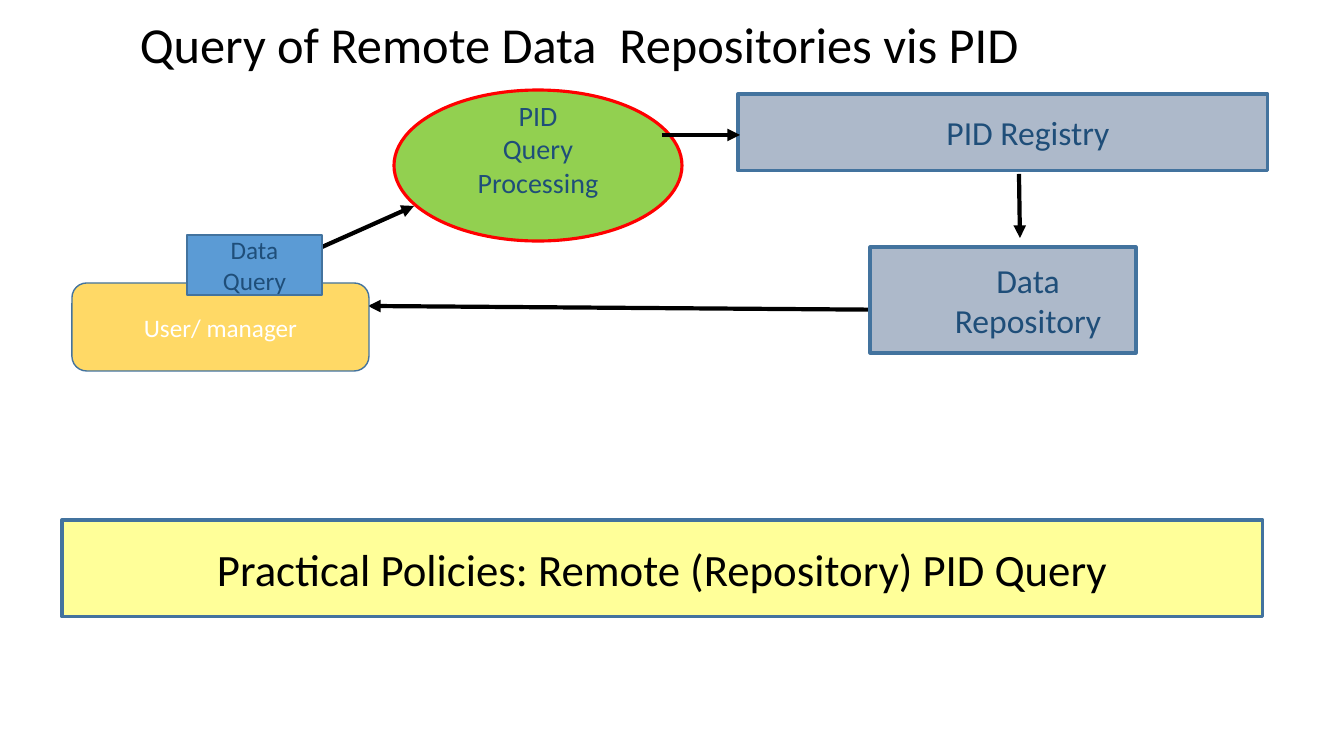
from lxml import etree
from pptx import Presentation
from pptx import util as u
from pptx.dml.color import RGBColor
from pptx.enum import shapes, text
from pptx.oxml.ns import qn

EMU_PER_PX = 914400 / 100.8
BLACK = "000000"
WHITE = "FFFFFF"
NAVY = "1F4E79"
STEEL = "43739E"
SLATE = "ADB9CA"


def px(length):
    return u.Emu(round(length * EMU_PER_PX))


def color(code):
    return RGBColor.from_string(code)


def write(shape, lines, size=18, ink=NAVY, font="Calibri", spacing=None, margins=(10, 5, 10, 5)):
    frame = shape.text_frame
    frame.word_wrap = True
    frame.auto_size = text.MSO_AUTO_SIZE.NONE
    frame.vertical_anchor = text.MSO_ANCHOR.MIDDLE
    frame.margin_left, frame.margin_top, frame.margin_right, frame.margin_bottom = map(px, margins)
    for index, line in enumerate(lines):
        para = frame.add_paragraph() if index else frame.paragraphs[0]
        para.alignment = text.PP_ALIGN.CENTER
        para.line_spacing = spacing
        span = para.add_run()
        span.text = line
        span.font.name = font
        span.font.size = u.Pt(size)
        span.font.color.rgb = color(ink)


class Canvas:
    def __init__(self, page, border=STEEL, border_width=2.25, arrow_width=3):
        self.page = page
        self.border = border
        self.border_width = border_width
        self.arrow_width = arrow_width

    def title(self, line, left, top, width, height):
        title = self.page.shapes.title
        title.left, title.top, title.width, title.height = map(px, (left, top, width, height))
        write(title, [line], size=36, ink=BLACK, spacing=0.9)

    def box(self, lines, left, top, width, height, fill, kind="RECTANGLE",
            border=None, border_width=None, **style):
        preset = shapes.MSO_SHAPE[kind]
        box = self.page.shapes.add_shape(preset, *map(px, (left, top, width, height)))
        box.shadow.inherit = False
        box.fill.solid()
        box.fill.fore_color.rgb = color(fill)
        box.line.color.rgb = color(border or self.border)
        box.line.width = u.Pt(border_width or self.border_width)
        write(box, lines, **style)

    def arrow(self, *ends):
        arrow = self.page.shapes.add_connector(shapes.MSO_CONNECTOR.STRAIGHT, *map(px, ends))
        arrow.line.color.rgb = color(BLACK)
        arrow.line.width = u.Pt(self.arrow_width)
        etree.SubElement(arrow.line._get_or_add_ln(), qn("a:tailEnd"), type="triangle")
        etree.SubElement(arrow._element.spPr, qn("a:effectLst"))


def main():
    deck = Presentation()
    deck.slide_width, deck.slide_height = px(1344), px(756)
    page = deck.slides.add_slide(deck.slide_layouts[5])
    canvas = Canvas(page)
    indented = (60, 5, 10, 5)

    canvas.title("Query of Remote Data  Repositories vis PID", 0, 7, 1159, 80)
    canvas.box(["PID Registry"], 738, 94, 530, 77, SLATE, size=24, margins=indented)
    canvas.box(["Practical Policies: Remote (Repository) PID Query"],
               62, 520, 1201, 97, "FFFF99", size=32, ink=BLACK)
    canvas.arrow(915, 310, 368, 306)
    canvas.arrow(322, 247, 414, 206)
    canvas.box(["Data Repository"], 870, 247, 266, 106, SLATE, size=24, margins=indented)
    canvas.box(["PID", "Query Processing"], 394, 90, 288, 151, "92D050", kind="OVAL",
               border="FF0000", size=20, margins=(10, 5, 10, 39))
    canvas.arrow(662, 135, 740, 135)
    canvas.arrow(1019, 174, 1020, 238)
    canvas.box(["User/ manager"], 72, 283, 297, 88, "FFD966", kind="ROUNDED_RECTANGLE",
               border_width=1, ink=WHITE)
    canvas.box(["Data Query"], 187, 235, 135, 60, "5B9BD5", border_width=1,
               margins=(14, 5, 14, 5))
    deck.save("out.pptx")


if __name__ == "__main__":
    main()
